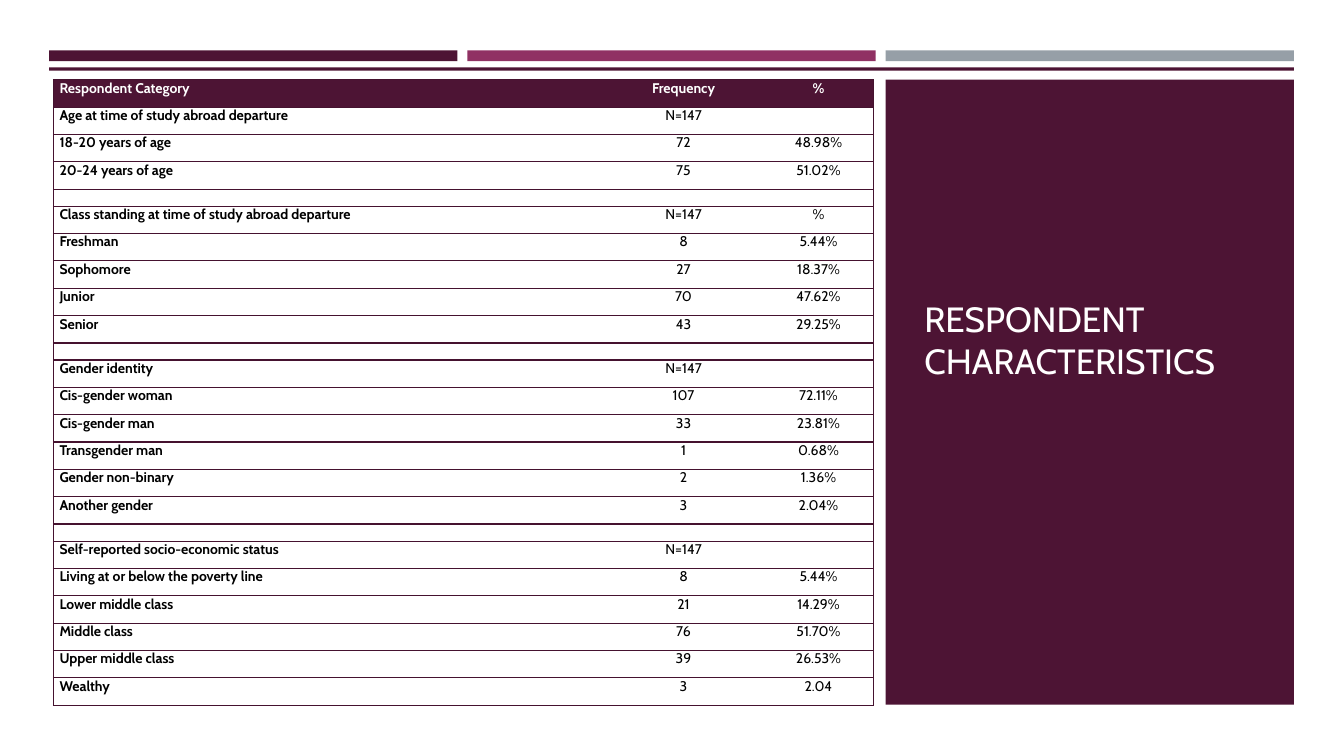
from dataclasses import dataclass

from lxml.etree import SubElement
from pptx import Presentation
from pptx.dml.color import RGBColor
from pptx.enum.shapes import MSO_SHAPE
from pptx.enum.text import MSO_ANCHOR, MSO_AUTO_SIZE, PP_ALIGN
from pptx.oxml.ns import qn
from pptx.util import Cm, Pt

FONT = "Cabin"
PLUM, MAGENTA, GREY = "4D1434", "903163", "969FA7"
BORDER, WHITE, BLACK = "45122F", "FFFFFF", "000000"
COLUMN_WIDTHS = (13.87, 4.01, 2.79)
ROW_HEIGHT, SPACER_HEIGHT = 0.69, 0.43
BAR_LEFT, BAR_STEP, BAR_WIDTH = 1.24, 10.54, 10.29
CONTENT_TOP, CONTENT_HEIGHT = 2.01, 15.75


@dataclass
class Block:
    left: float
    top: float
    width: float
    height: float
    color: str


@dataclass
class Row:
    category: str = ""
    frequency: str = ""
    percent: str = ""


ROWS = [
    Row("Respondent Category", "Frequency", "%"),
    Row("Age at time of study abroad departure", "N=147"),
    Row("18-20 years of age", "72", "48.98%"),
    Row("20-24 years of age", "75", "51.02%"),
    Row(),
    Row("Class standing at time of study abroad departure", "N=147", "%"),
    Row("Freshman", "8", "5.44%"),
    Row("Sophomore", "27", "18.37%"),
    Row("Junior", "70", "47.62%"),
    Row("Senior", "43", "29.25%"),
    Row(),
    Row("Gender identity", "N=147"),
    Row("Cis-gender woman", "107", "72.11%"),
    Row("Cis-gender man", "33", "23.81%"),
    Row("Transgender man", "1", "0.68%"),
    Row("Gender non-binary", "2", "1.36%"),
    Row("Another gender", "3", "2.04%"),
    Row(),
    Row("Self-reported socio-economic status", "N=147"),
    Row("Living at or below the poverty line", "8", "5.44%"),
    Row("Lower middle class", "21", "14.29%"),
    Row("Middle class", "76", "51.70%"),
    Row("Upper middle class", "39", "26.53%"),
    Row("Wealthy", "3", "2.04"),
]


def rgb(color: str) -> RGBColor:
    return RGBColor.from_string(color)


def draw_block(slide, block: Block) -> None:
    shape = slide.shapes.add_shape(MSO_SHAPE.RECTANGLE, Cm(block.left), Cm(block.top),
                                   Cm(block.width), Cm(block.height))
    shape.shadow.inherit = False
    shape.fill.solid()
    shape.fill.fore_color.rgb = rgb(block.color)
    shape.line.fill.background()


def format_span(span, size: float, color: str, bold: bool = False) -> None:
    span.font.name = FONT
    span.font.size = Pt(size)
    span.font.bold = bold
    span.font.color.rgb = rgb(color)


def set_borders(cell, column: int) -> None:
    """Rule every row, and close the table only at its outer sides."""
    visible = {"a:lnL": column == 0, "a:lnR": column == len(COLUMN_WIDTHS) - 1,
               "a:lnT": True, "a:lnB": True}
    properties = cell._tc.get_or_add_tcPr()
    for side, shown in visible.items():
        line = SubElement(properties, qn(side), w=str(Pt(1)))
        if shown:
            fill = SubElement(line, qn("a:solidFill"))
            SubElement(fill, qn("a:srgbClr"), val=BORDER)
        else:
            SubElement(line, qn("a:noFill"))


def fill_cell(cell, text: str, column: int, header: bool) -> None:
    set_borders(cell, column)
    cell.fill.solid()
    cell.fill.fore_color.rgb = rgb(PLUM if header else WHITE)
    cell.margin_left = cell.margin_right = Cm(0.15)
    cell.margin_top = cell.margin_bottom = 0
    cell.vertical_anchor = MSO_ANCHOR.TOP
    para = cell.text_frame.paragraphs[0]
    if not text:
        # Small end mark keeps the empty rows low
        SubElement(para._p, qn("a:endParaRPr"), sz="800")
        return
    para.text = text
    para.alignment = PP_ALIGN.CENTER if column else PP_ALIGN.LEFT
    format_span(para.runs[0], 10, WHITE if header else BLACK, header or column == 0)


def draw_table(slide, rows: list[Row]) -> None:
    frame = slide.shapes.add_table(len(rows), len(COLUMN_WIDTHS), Cm(1.35), Cm(CONTENT_TOP),
                                   Cm(sum(COLUMN_WIDTHS)), Cm(CONTENT_HEIGHT))
    table = frame.table
    table.horz_banding = False
    for column, width in zip(table.columns, COLUMN_WIDTHS):
        column.width = Cm(width)
    for index, row in enumerate(rows):
        table.rows[index].height = Cm(ROW_HEIGHT if row.category else SPACER_HEIGHT)
        for column, text in enumerate((row.category, row.frequency, row.percent)):
            fill_cell(table.cell(index, column), text, column, index == 0)


def place_title(slide, text: str) -> None:
    title = slide.shapes.title
    title.left, title.top, title.width, title.height = Cm(23.04), Cm(3.94), Cm(8.56), Cm(5.79)
    frame = title.text_frame
    frame.text = text
    frame.word_wrap = True
    frame.auto_size = MSO_AUTO_SIZE.NONE
    frame.vertical_anchor = MSO_ANCHOR.BOTTOM
    para = frame.paragraphs[0]
    para.alignment = PP_ALIGN.LEFT
    format_span(para.runs[0], 25, WHITE)
    # Bring the title in front of its panel
    slide.shapes._spTree.append(title._element)


def main() -> None:
    deck = Presentation()
    deck.slide_width, deck.slide_height = Cm(33.87), Cm(19.05)
    slide = deck.slides.add_slide(deck.slide_layouts[5])

    # Top bars, rule and side panel
    blocks = [Block(BAR_LEFT + index * BAR_STEP, 1.27, BAR_WIDTH, 0.27, color)
              for index, color in enumerate((PLUM, MAGENTA, GREY))]
    blocks.append(Block(BAR_LEFT, 1.7, 2 * BAR_STEP + BAR_WIDTH, 0.08, PLUM))
    blocks.append(Block(BAR_LEFT + 2 * BAR_STEP, CONTENT_TOP, BAR_WIDTH, CONTENT_HEIGHT, PLUM))
    for block in blocks:
        draw_block(slide, block)

    # Title and respondent table
    place_title(slide, "RESPONDENT CHARACTERISTICS")
    draw_table(slide, ROWS)
    deck.save("out.pptx")


if __name__ == "__main__":
    main()
